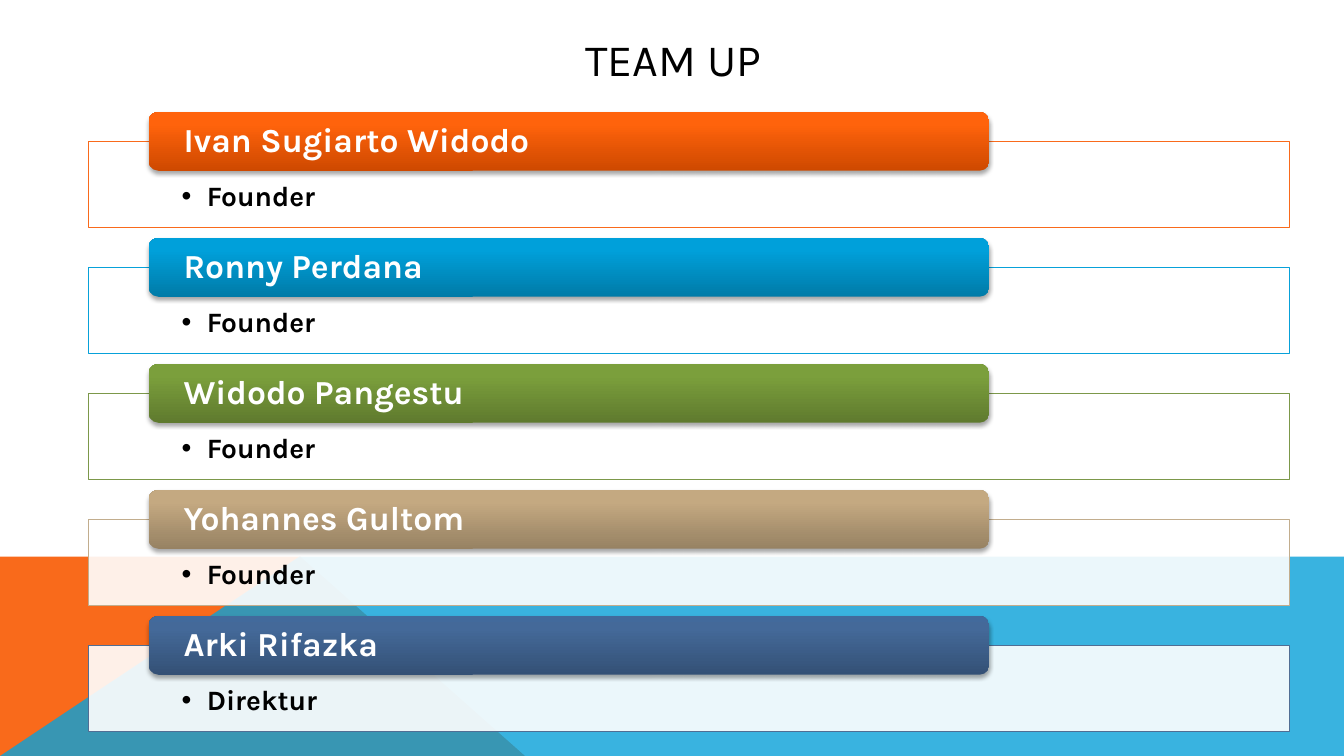
from copy import deepcopy

from lxml.etree import SubElement
from pptx import Presentation
from pptx.dml.color import RGBColor
from pptx.enum.shapes import MSO_SHAPE
from pptx.enum.text import MSO_ANCHOR, PP_ALIGN
from pptx.oxml.ns import qn
from pptx.util import Pt

COLORS = {
    "white": "FFFFFF",
    "black": "000000",
    "orange": "F96A1B",
    "blue": "08A1D9",
    "green": "7C984A",
    "tan": "C2AD8D",
    "navy": "506E94",
}
GRADIENTS = {
    "orange": ("CE4900", "FF630C", "FF640E"),
    "blue": ("007BA8", "00A0DA", "00A0DB"),
    "green": ("5F7A2E", "7B9F3C", "7CA13B"),
    "tan": ("978263", "C4A981", "C6AA80"),
    "navy": ("345176", "446999", "426A9C"),
}
STOPS = (0, 0.8, 1)
TEAM = [
    ("Ivan Sugiarto Widodo", "Founder", "orange"),
    ("Ronny Perdana", "Founder", "blue"),
    ("Widodo Pangestu", "Founder", "green"),
    ("Yohannes Gultom", "Founder", "tan"),
    ("Arki Rifazka", "Direktur", "navy"),
]
WIDTH, HEIGHT = 960, 540


def rgb(name):
    return RGBColor.from_string(COLORS[name])


def write_text(s, text, size=20, color="black", bold=False, align=PP_ALIGN.LEFT,
               anchor=MSO_ANCHOR.MIDDLE, insets=(0, 0, 0, 0), spacing=0.9,
               bullet=False):
    tf = s.text_frame
    tf.word_wrap = True
    tf.vertical_anchor = anchor
    tf.margin_left, tf.margin_top, tf.margin_right, tf.margin_bottom = map(Pt, insets)
    p = tf.paragraphs[0]
    p.alignment = align
    p.line_spacing = spacing
    r = p.add_run()
    r.text = text
    r.font.name = "Karla"
    r.font.size = Pt(size)
    r.font.bold = bold
    r.font.color.rgb = rgb(color)
    if bullet:
        pPr = p._p.get_or_add_pPr()
        pPr.set("marL", str(Pt(18)))
        pPr.set("indent", str(-Pt(18)))
        SubElement(pPr, qn("a:buFont"), typeface="Arial")
        SubElement(pPr, qn("a:buChar"), char="•")


def fill_solid(s, color, alpha=100):
    s.shadow.inherit = False
    s.fill.solid()
    s.fill.fore_color.rgb = rgb(color)
    if alpha < 100:
        clr = s._element.spPr.find(qn("a:solidFill"))[0]
        SubElement(clr, qn("a:alpha"), val=str(alpha * 1000))


def fill_gradient(s, hexes):
    s.fill.gradient()
    s.fill.gradient_angle = 90
    gs_list = s._element.spPr.find(".//" + qn("a:gsLst"))
    gs_list.append(deepcopy(gs_list[-1]))
    for stop, position, value in zip(s.fill.gradient_stops, STOPS, hexes):
        stop.position = position
        stop.color.rgb = RGBColor.from_string(value)


def add_soft_shadow(s):
    s.shadow.inherit = False
    effects = s._element.spPr.find(qn("a:effectLst"))
    shadow = SubElement(effects, qn("a:outerShdw"), blurRad=str(Pt(3.1)),
                        dist=str(Pt(1.8)), dir="5400000", rotWithShape="0")
    clr = SubElement(shadow, qn("a:srgbClr"), val=COLORS["black"])
    SubElement(clr, qn("a:alpha"), val="35000")


def add_backdrop(slide, x, y, w, h):
    wedges = [
        ([(0, h), (0, 0), (214.5, 0), (375, h)], "orange", 100),
        ([(0, h), (214, 0), (w, 0), (w, h)], "blue", 80),
    ]
    for points, color, alpha in wedges:
        points = [(Pt(x + dx), Pt(y + dy)) for dx, dy in points]
        builder = slide.shapes.build_freeform(*points[0])
        builder.add_line_segments(points[1:], close=True)
        s = builder.convert_to_shape()
        fill_solid(s, color, alpha)
        s.line.fill.background()


def add_title(slide, text, x, y, w, h):
    s = slide.shapes.add_textbox(Pt(x), Pt(y), Pt(w), Pt(h))
    write_text(s, text, size=32, align=PP_ALIGN.CENTER, spacing=1)


def add_member(slide, name, role, color, x, y, w, h):
    bar_h = 42
    frame_y = y + bar_h / 2
    s = slide.shapes.add_shape(MSO_SHAPE.RECTANGLE, Pt(x), Pt(frame_y),
                               Pt(w), Pt(y + h - frame_y))
    fill_solid(s, "white", 90)
    s.line.color.rgb = rgb(color)
    s.line.width = Pt(0.75)
    write_text(s, role, bold=True, anchor=MSO_ANCHOR.TOP,
               insets=(66.5, 29.5, 66.5, 11.5), bullet=True)

    s = slide.shapes.add_shape(MSO_SHAPE.ROUNDED_RECTANGLE, Pt(x + w * 0.05), Pt(y),
                               Pt(w * 0.7), Pt(bar_h))
    fill_gradient(s, GRADIENTS[color])
    s.line.fill.background()
    add_soft_shadow(s)
    write_text(s, name, size=24, color="white", bold=True, insets=(23, 0, 23, 0))


def add_team(slide, x, y, w, pitch, row_h):
    for i, (name, role, color) in enumerate(TEAM):
        add_member(slide, name, role, color, x, y + i * pitch, w, row_h)


def main():
    prs = Presentation()
    prs.slide_width, prs.slide_height = Pt(WIDTH), Pt(HEIGHT)
    slide = prs.slides.add_slide(prs.slide_layouts[6])
    add_backdrop(slide, 0, 397.5, WIDTH, HEIGHT - 397.5)
    add_title(slide, "TEAM UP", 86, 20, 790, 43)
    add_team(slide, 63.25, 80, 858, 90, 82.5)
    prs.save("out.pptx")


if __name__ == "__main__":
    main()
